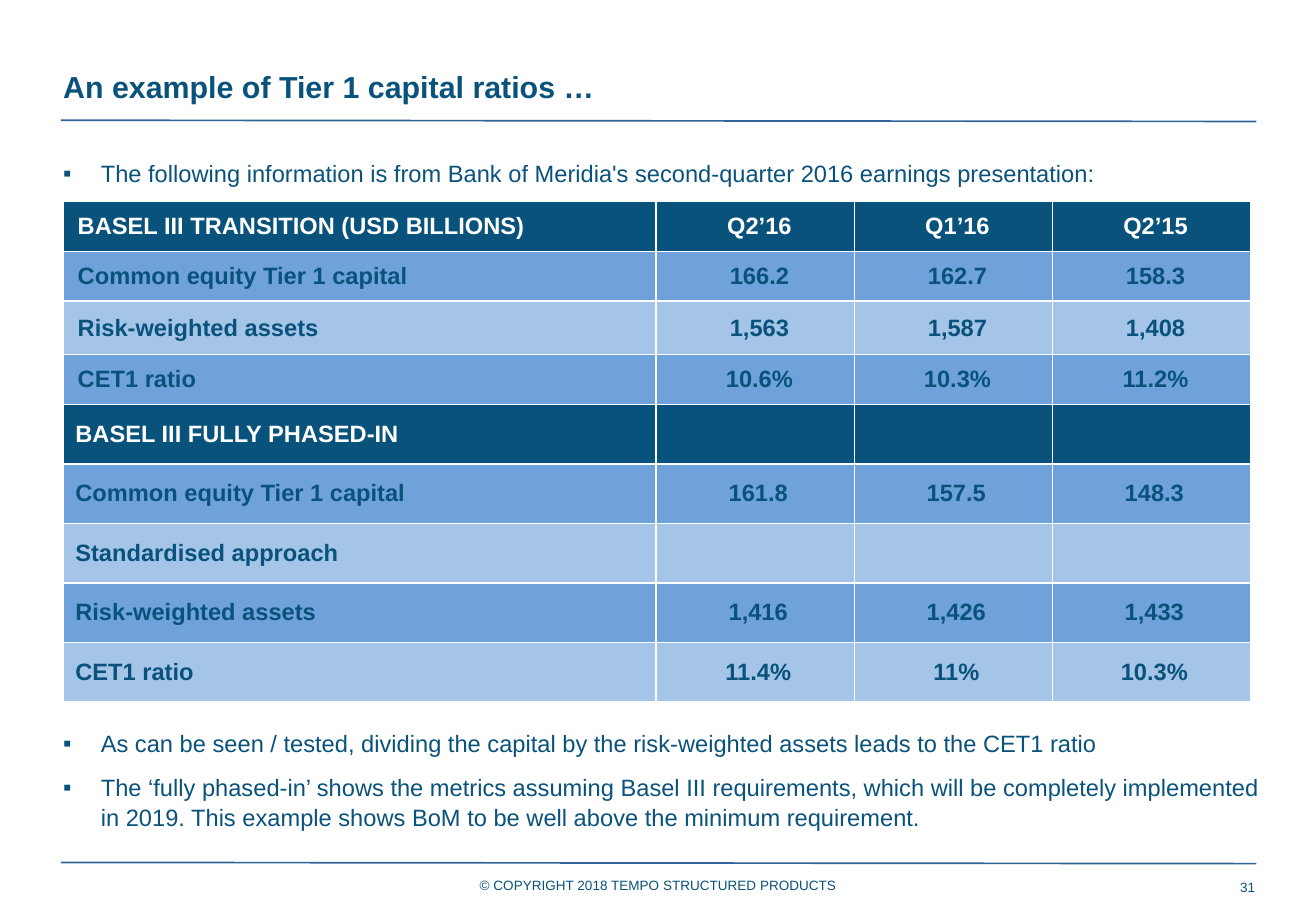
from dataclasses import dataclass

from lxml import etree
from pptx import Presentation
from pptx.dml.color import RGBColor
from pptx.enum import shapes, text
from pptx.oxml.ns import qn
from pptx.util import Inches, Pt

TITLE = "An example of Tier 1 capital ratios …"
INTRO = "The following information is from Bank of Meridia's second-quarter 2016 earnings presentation:"
REMARKS = [
    "As can be seen / tested, dividing the capital by the risk-weighted assets leads to the CET1 ratio",
    "The ‘fully phased-in’ shows the metrics assuming Basel III requirements, which will be completely "
    "implemented in 2019. This example shows BoM to be well above the minimum requirement.",
]
COPYRIGHT = "© COPYRIGHT 2018 TEMPO STRUCTURED PRODUCTS"
PAGE_NUMBER = "31"

# Each section: cell indent, row heights, rows (the first row is its heading)
SECTIONS = [
    (0.07, [0.41, 0.41, 0.44, 0.41], [
        ("BASEL III TRANSITION (USD BILLIONS)", "Q2’16", "Q1’16", "Q2’15"),
        ("Common equity Tier 1 capital", "166.2", "162.7", "158.3"),
        ("Risk-weighted assets", "1,563", "1,587", "1,408"),
        ("CET1 ratio", "10.6%", "10.3%", "11.2%"),
    ]),
    (0.05, [0.49] * 5, [
        ("BASEL III FULLY PHASED-IN", "", "", ""),
        ("Common equity Tier 1 capital", "161.8", "157.5", "148.3"),
        ("Standardised approach", "", "", ""),
        ("Risk-weighted assets", "1,416", "1,426", "1,433"),
        ("CET1 ratio", "11.4%", "11%", "10.3%"),
    ]),
]
COLUMN_WIDTHS = [4.88, 1.63, 1.63, 1.63]
LABEL_INDENT = 0.05
TABLE_GAP = 312  # points left between intro and remarks for the table


@dataclass(frozen=True)
class Theme:
    font: str = "Arial"
    ink: str = "09527B"
    rule: str = "336499"
    white: str = "FFFFFF"
    bands: tuple = ("6FA2DB", "A4C4E8")
    title_size: int = 18
    body_size: int = 14
    small_size: int = 8


THEME = Theme()
ALIGN = text.PP_ALIGN


def write(para, words, size=THEME.body_size, color=THEME.ink, bold=False, align=ALIGN.LEFT):
    para.alignment = align
    span = para.add_run()
    span.text = words
    span.font.name = THEME.font
    span.font.size = Pt(size)
    span.font.bold = bold
    span.font.color.rgb = RGBColor.from_string(color)


def place(shape, left, top, width, height):
    shape.left, shape.top = Inches(left), Inches(top)
    shape.width, shape.height = Inches(width), Inches(height)


def add_bullet(para):
    props = para._p.get_or_add_pPr()
    props.set("marL", str(Inches(0.31)))
    props.set("indent", str(-Inches(0.31)))
    etree.SubElement(props, qn("a:buFont"), typeface=THEME.font)
    etree.SubElement(props, qn("a:buChar"), char="▪")


def add_rule(page, start_y, end_y):
    line = page.shapes.add_connector(
        shapes.MSO_CONNECTOR.STRAIGHT, Inches(0.5), Inches(start_y), Inches(10.34), Inches(end_y))
    line.line.color.rgb = RGBColor.from_string(THEME.rule)
    line.line.width = Pt(1)
    etree.SubElement(line._element.spPr, qn("a:effectLst"))


def add_borders(cell):
    props = cell._tc.get_or_add_tcPr()
    for side in ("lnL", "lnR", "lnT", "lnB"):
        border = etree.SubElement(props, qn("a:" + side), w=str(Pt(1)))
        fill = etree.SubElement(border, qn("a:solidFill"))
        etree.SubElement(fill, qn("a:srgbClr"), val=THEME.white)


def fill_cell(cell, words, indent, fill, **style):
    add_borders(cell)
    cell.fill.solid()
    cell.fill.fore_color.rgb = RGBColor.from_string(fill)
    cell.vertical_anchor = text.MSO_ANCHOR.MIDDLE
    cell.margin_left = Inches(indent)
    cell.margin_right = cell.margin_top = cell.margin_bottom = 0
    if words:
        write(cell.text_frame.paragraphs[0], words, bold=True, **style)


def add_capital_table(page):
    heights = [height for _, section_heights, _ in SECTIONS for height in section_heights]
    table = page.shapes.add_table(
        len(heights), len(COLUMN_WIDTHS), Inches(0.52), Inches(1.66),
        Inches(sum(COLUMN_WIDTHS)), Inches(sum(heights))).table
    table.first_row = table.horz_banding = False
    for column, width in zip(table.columns, COLUMN_WIDTHS):
        column.width = Inches(width)
    for row, height in zip(table.rows, heights):
        row.height = Inches(height)

    table_rows = iter(table.rows)
    for indent, _, rows in SECTIONS:
        for number, values in enumerate(rows):
            heading = number == 0
            fill = THEME.ink if heading else THEME.bands[(number - 1) % 2]
            color = THEME.white if heading else THEME.ink
            for column, (cell, words) in enumerate(zip(next(table_rows).cells, values)):
                label = column == 0
                fill_cell(cell, words, indent + LABEL_INDENT * label, fill, color=color,
                          align=ALIGN.LEFT if label else ALIGN.CENTER)


def add_title(page):
    title = page.shapes.title
    place(title, 0.42, 0.51, 7.43, 0.4)
    title.text_frame.auto_size = text.MSO_AUTO_SIZE.NONE
    title.text_frame.vertical_anchor = text.MSO_ANCHOR.TOP
    write(title.text_frame.paragraphs[0], TITLE, size=THEME.title_size, bold=True)


def add_body(page):
    body = page.placeholders[1]
    place(body, 0.42, 1.24, 10.16, 5.71)
    frame = body.text_frame
    frame.auto_size = text.MSO_AUTO_SIZE.NONE
    for number, words in enumerate([INTRO, *REMARKS]):
        para = frame.add_paragraph() if number else frame.paragraphs[0]
        add_bullet(para)
        para.line_spacing = 1.07
        para.space_before = Pt(TABLE_GAP if number == 1 else 0)
        para.space_after = Pt(8)
        write(para, words)


def add_footer(page):
    box = page.shapes.add_textbox(Inches(3.85), Inches(7.17), Inches(3.16), Inches(0.24))
    box.text_frame.word_wrap = False
    write(box.text_frame.paragraphs[0], COPYRIGHT, size=THEME.small_size)

    box = page.shapes.add_textbox(Inches(9.65), Inches(7.22), Inches(0.68), Inches(0.16))
    frame = box.text_frame
    frame.word_wrap = True
    frame.vertical_anchor = text.MSO_ANCHOR.MIDDLE
    frame.margin_left = frame.margin_right = frame.margin_top = frame.margin_bottom = 0
    write(frame.paragraphs[0], PAGE_NUMBER, size=THEME.small_size, align=ALIGN.RIGHT)


def main():
    deck = Presentation()
    deck.slide_width, deck.slide_height = Inches(10.83), Inches(7.5)
    page = deck.slides.add_slide(deck.slide_layouts[1])
    add_rule(page, 7.1, 7.11)
    add_rule(page, 0.99, 1)
    add_title(page)
    add_body(page)
    add_capital_table(page)
    add_footer(page)
    deck.save("out.pptx")


if __name__ == "__main__":
    main()
